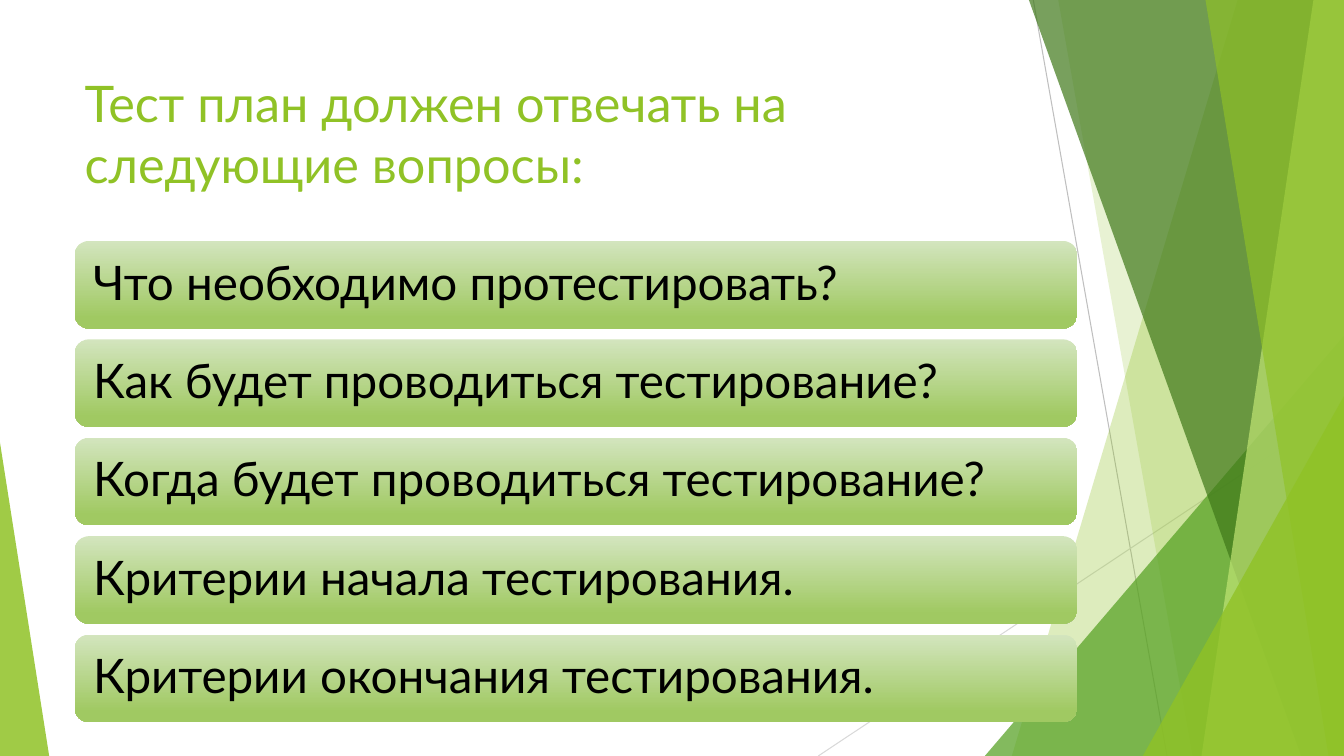
from collections import namedtuple

from lxml.etree import SubElement
from pptx import Presentation
from pptx.dml.color import RGBColor
from pptx.enum.dml import MSO_THEME_COLOR
from pptx.enum.shapes import MSO_CONNECTOR, MSO_SHAPE
from pptx.enum.text import MSO_ANCHOR, MSO_AUTO_SIZE, PP_ALIGN
from pptx.oxml.ns import qn
from pptx.util import Cm, Pt

Box = namedtuple("Box", "x y w h")  # centimetres

PAGE = Box(0, 0, 33.87, 19.05)
GREEN = "90C226"
TITLE = "Тест план должен отвечать на следующие вопросы:"
ITEMS = [
    "Что необходимо протестировать?",
    "Как будет проводиться тестирование?",
    "Когда будет проводиться тестирование?",
    "Критерии начала тестирования.",
    "Критерии окончания тестирования.",
]
# Right edge pieces, back to front: kind, two offsets, colour, opacity in percent.
# A shard gives its left edge at top and foot, a wedge its left and top.
PIECES = [
    ("shard", 10.57, 4.88, GREEN, 30),
    ("shard", 6.05, 9.43, GREEN, 20),
    ("wedge", 4.2, 8.46, "54A021", 72),
    ("shard", 5.31, 12.17, "3F7819", 70),
    ("shard", 12.48, 9.66, "C0E474", 70),
    ("shard", 9.76, 12.86, GREEN, 65),
    ("wedge", 8.18, 9.98, GREEN, 80),
]


def hue(code):
    return RGBColor.from_string(code)


def apply(obj, style):
    for name, value in style.items():
        setattr(obj, name, value)


def paint(shape, code, alpha):
    """Fill a shape with a see-through colour and no outline."""
    shape.shadow.inherit = False
    shape.line.fill.background()
    shape.fill.solid()
    shape.fill.fore_color.rgb = hue(code)
    tint = shape.fill._xPr.find(".//" + qn("a:srgbClr"))
    SubElement(tint, qn("a:alpha")).set("val", str(alpha * 1000))


def rule(slide, start, end, code):
    line = slide.shapes.add_connector(
        MSO_CONNECTOR.STRAIGHT, *(Cm(v) for v in start + end))
    line.line.color.rgb = hue(code)
    line.line.width = Pt(0.75)
    SubElement(line._element.spPr, qn("a:effectLst"))


def shard(slide, box, top, foot):
    right, base = box.x + box.w, box.y + box.h
    spots = [(box.x + top, box.y), (right, box.y), (right, base),
             (box.x + foot, base)]
    dots = [(Cm(x), Cm(y)) for x, y in spots]
    form = slide.shapes.build_freeform(*dots[0])
    form.add_line_segments(dots[1:], close=True)
    return form.convert_to_shape()


def wedge(slide, box, apex):
    """Add a right triangle whose apex lies at 0 (left) or 1 (right)."""
    shape = slide.shapes.add_shape(
        MSO_SHAPE.ISOSCELES_TRIANGLE, *(Cm(v) for v in box))
    shape.adjustments[0] = apex
    return shape


def facets(slide, box):
    right, base = box.x + box.w, box.y + box.h
    rule(slide, (box.x + 5.42, box.y), (box.x + 8.79, base), "BFBFBF")
    rule(slide, (right, box.y + 10.24), (box.x, base), "D9D9D9")
    for kind, a, b, code, alpha in PIECES:
        if kind == "shard":
            shape = shard(slide, box, a, b)
        else:
            part = Box(box.x + a, box.y + b, box.w - a, box.h - b)
            shape = wedge(slide, part, 1)
        paint(shape, code, alpha)


def write(shape, text, frame, para, font, code):
    apply(shape.text_frame, frame)
    line = shape.text_frame.paragraphs[0]
    apply(line, para)
    run = line.add_run()
    run.text = text
    apply(run.font, font)
    run.font.color.rgb = hue(code)


def heading(slide, box):
    title = slide.shapes.title
    sides = zip(("left", "top", "width", "height"), box)
    apply(title, {side: Cm(v) for side, v in sides})
    write(title, TITLE,
          {"vertical_anchor": MSO_ANCHOR.TOP, "word_wrap": True,
           "auto_size": MSO_AUTO_SIZE.NONE},
          {"alignment": PP_ALIGN.LEFT},
          {"name": "Lato", "size": Pt(36)}, GREEN)


def shade(shape):
    shape.shadow.inherit = False
    shape.line.fill.background()
    shape.fill.gradient()
    shape.fill.gradient_angle = 270
    stops = [(0, "D3E5BE"), (0.88, "A0C962")]
    for stop, (spot, code) in zip(shape.fill.gradient_stops, stops):
        stop.position = spot
        stop.color.rgb = hue(code)


def bars(slide, box, gap=0.27):
    """Stack one bar per item, evenly filling the box."""
    tall = (box.h - gap * (len(ITEMS) - 1)) / len(ITEMS)
    for i, text in enumerate(ITEMS):
        top = box.y + i * (tall + gap)
        bar = slide.shapes.add_shape(
            MSO_SHAPE.ROUNDED_RECTANGLE,
            Cm(box.x), Cm(top), Cm(box.w), Cm(tall))
        shade(bar)
        write(bar, text,
              {"vertical_anchor": MSO_ANCHOR.MIDDLE, "word_wrap": True,
               "margin_left": Cm(0.36), "margin_right": Cm(0.36)},
              {"alignment": PP_ALIGN.LEFT, "line_spacing": 0.9},
              {"name": "Lato", "size": Pt(34)}, "000000")


def main():
    deck = Presentation()
    apply(deck, {"slide_width": Cm(PAGE.w), "slide_height": Cm(PAGE.h)})
    slide = deck.slides.add_slide(deck.slide_layouts[5])
    slide.background.fill.solid()
    slide.background.fill.fore_color.theme_color = MSO_THEME_COLOR.BACKGROUND_1
    facets(slide, Box(20.62, 0, 13.25, PAGE.h))
    paint(wedge(slide, Box(0, 11.15, 1.24, 7.9), 0), GREEN, 85)
    heading(slide, Box(1.88, 1.7, 23.88, 3.66))
    bars(slide, Box(1.88, 6.07, 25.27, 12.13))
    deck.save("out.pptx")


if __name__ == "__main__":
    main()
